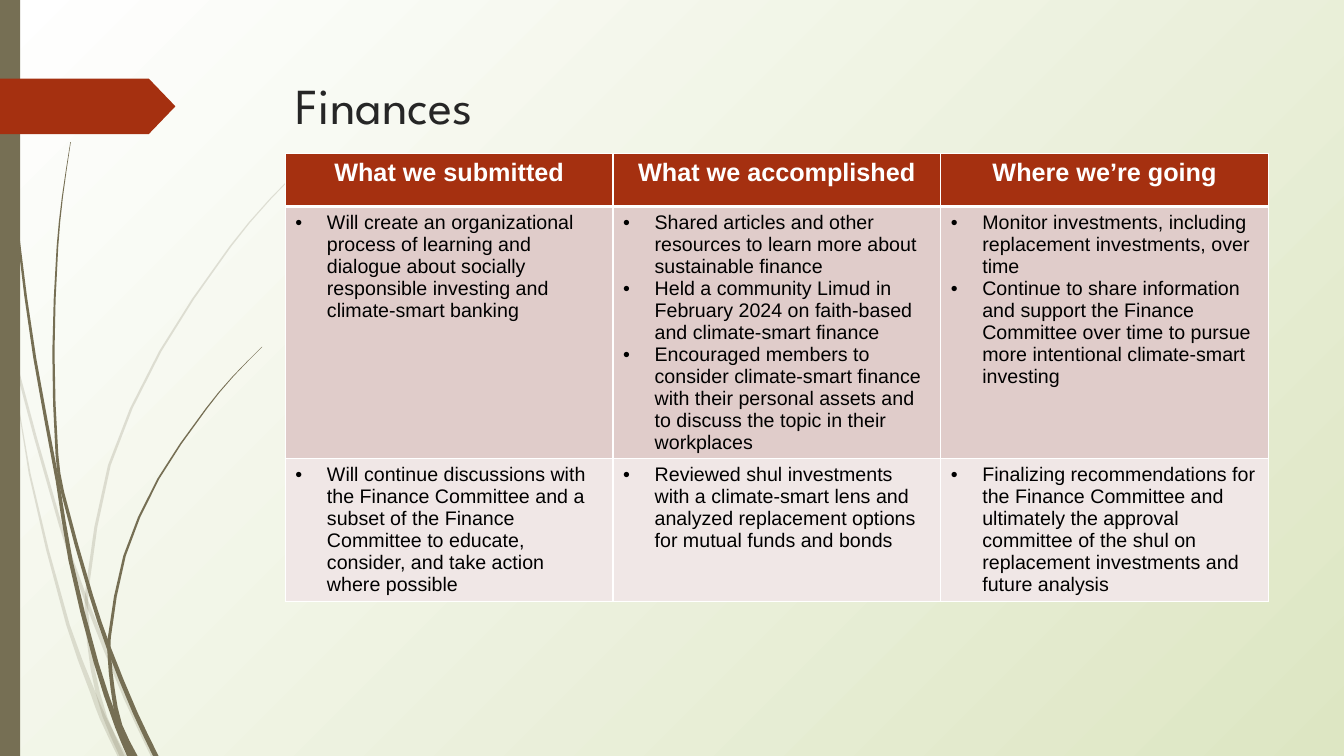
from dataclasses import dataclass

import pptx
import pptx.dml.color
import pptx.enum.shapes
import pptx.enum.text
import pptx.oxml
import pptx.oxml.ns
import pptx.util

COLORS = {
    "white": "FFFFFF", "pale green": "DDE6C3", "olive": "766F54", "rust": "A53010",
    "ink": "262626", "black": "000000", "rose": "E0CCCA", "blush": "F0E7E6",
}
WIDTH, HEIGHT = pptx.util.Inches(13.33), pptx.util.Inches(7.5)
GRID_COLS, GRID_ROWS = 133.3, 75
STEPS = 2  # samples between two knots of a grass blade


@dataclass
class Blade:
    """A grass blade: knots in grid cells from top to bottom, the knots where
    one section ends and the next begins, and its width at top and bottom."""
    knots: list[tuple[float, float]]
    joints: list[int]
    start: float
    end: float
    opacity: int = 100


@dataclass
class TableRow:
    height: float
    fill: str
    cells: list[list[str]]
    header: bool = False


BLADES = [
    Blade([(0.1, 29), (1.2, 34.7), (6, 52.1), (8.6, 59.7), (12.5, 69.3), (15.2, 75)],
          [1, 3], 0.2, 0.5, 20),
    Blade([(1.1, 35), (2.95, 47), (6.75, 62), (9.25, 68.8), (10.3, 71.4), (12.1, 75)],
          [4], 0, 0.9, 20),
    Blade([(31.2, 15.3), (26.8, 19.75), (22.85, 24.45), (15.9, 34.85), (10.85, 46.15),
           (8.65, 58.4), (8.6, 61), (9.2, 66.4), (10.4, 71.1), (12.1, 75)],
          [5, 6, 8], 0.1, 0.5, 20),
    Blade([(0.35, 0), (0.75, 11), (1.8, 23.3), (3.45, 35.5), (5.7, 47.7), (7, 55.6),
           (9.55, 65.8), (11.7, 72.2), (12.9, 75)], [4, 7], 0.1, 0.6),
    Blade([(7, 14.1), (6.2, 19.5), (5.7, 24.5), (5.3, 34.9), (5.65, 45.1), (6.2, 48.8),
           (9.05, 59.1), (10.8, 64.3), (13.4, 70.7), (15.45, 75)], [5, 7], 0.05, 0.55),
    Blade([(26, 34.4), (23.1, 37.35), (20.45, 40.55), (15.7, 47.5), (12.35, 55.15),
           (10.85, 63.2), (10.85, 65), (11.2, 68.5), (11.9, 71.9), (13.4, 75)],
          [5, 6, 8], 0.05, 0.5),
]
TABLE_ROWS = [
    TableRow(5.28, "rust", [["What we submitted"], ["What we accomplished"],
                            ["Where we’re going"]], header=True),
    TableRow(13.5, "rose", [
        ["Will create an organizational process of learning and dialogue about socially "
         "responsible investing and climate-smart banking"],
        ["Shared articles and other resources to learn more about sustainable finance",
         "Held a community Limud in February 2024 on faith-based and climate-smart finance",
         "Encouraged members to consider climate-smart finance with their personal assets "
         "and to discuss the topic in their workplaces"],
        ["Monitor investments, including replacement investments, over time",
         "Continue to share information and support the Finance Committee over time to "
         "pursue more intentional climate-smart investing"],
    ]),
    TableRow(13.5, "blush", [
        ["Will continue discussions with the Finance Committee and a subset of the Finance "
         "Committee to educate, consider, and take action where possible"],
        ["Reviewed shul investments with a climate-smart lens and analyzed replacement "
         "options for mutual funds and bonds"],
        ["Finalizing recommendations for the Finance Committee and ultimately the approval "
         "committee of the shul on replacement investments and future analysis"],
    ]),
]


def col(n: float) -> int:
    return round(WIDTH * n / GRID_COLS)


def row(n: float) -> int:
    return round(HEIGHT * n / GRID_ROWS)


def box(left: float, top: float, width: float, height: float) -> tuple[int, int, int, int]:
    return col(left), row(top), col(width), row(height)


def rgb(name: str) -> pptx.dml.color.RGBColor:
    return pptx.dml.color.RGBColor.from_string(COLORS[name])


def xml(tag: str, attrs: str = "", inner: str = ""):
    return pptx.oxml.parse_xml(
        f'<a:{tag} {pptx.oxml.ns.nsdecls("a")} {attrs}>{inner}</a:{tag}>')


def add_text(tf, lines: list[str], *, size: float, color: str, font: str = "Arial",
             bold: bool = False, align: str = "LEFT", bullet: bool = False) -> None:
    for i, line in enumerate(lines):
        p = tf.add_paragraph() if i else tf.paragraphs[0]
        p.alignment = getattr(pptx.enum.text.PP_ALIGN, align)
        r = p.add_run()
        r.text = line
        r.font.size, r.font.name, r.font.bold = pptx.util.Pt(size), font, bold
        r.font.color.rgb = rgb(color)
        if bullet:
            pPr = p._p.get_or_add_pPr()
            pPr.set("marL", str(col(3.13)))
            pPr.set("indent", str(-col(3.13)))
            pPr.append(xml("buFont", 'typeface="Arial"'))
            pPr.append(xml("buChar", 'char="•"'))


def paint(sp, color: str, opacity: int = 100) -> None:
    sp.shadow.inherit = False
    sp.line.fill.background()
    sp.fill.solid()
    sp.fill.fore_color.rgb = rgb(color)
    if opacity < 100:
        clr = next(sp._element.spPr.iter(pptx.oxml.ns.qn("a:srgbClr")))
        clr.append(xml("alpha", f'val="{opacity * 1000}"'))


def smooth(knots: list[tuple[float, float]]) -> list[tuple[float, float]]:
    """Sample a cubic Hermite curve, x as a function of y, through the knots."""
    ends = [knots[0], *knots, knots[-1]]
    slopes = [(c[0] - a[0]) / (c[1] - a[1]) for a, c in zip(ends, ends[2:])]
    points = []
    for (x0, y0), (x1, y1), m0, m1 in zip(knots, knots[1:], slopes, slopes[1:]):
        h = y1 - y0
        for step in range(STEPS):
            t = step / STEPS
            x = (x0 + (x1 - x0) * t * t * (3 - 2 * t)
                 + h * t * (1 - t) * (m0 * (1 - t) - m1 * t))
            points.append((x, y0 + h * t))
    return points + [knots[-1]]


def draw_blade(s, blade: Blade) -> None:
    points = smooth(blade.knots)
    last = len(points) - 1
    left, right = [], []
    for i, (x, y) in enumerate(points):
        half = (blade.start + (blade.end - blade.start) * i / last) / 2
        left.append((col(x - half), row(y)))
        right.append((col(x + half), row(y)))
    cuts = [0, *(joint * STEPS for joint in blade.joints), last]
    for a, b in zip(cuts, cuts[1:]):
        outline = left[a:b + 1] + right[a:b + 1][::-1]
        builder = s.shapes.build_freeform(*outline[0])
        builder.add_line_segments(outline[1:], close=True)
        paint(builder.convert_to_shape(), "olive", blade.opacity)


def set_borders(cell, top: float, bottom: float) -> None:
    tcPr = cell._tc.get_or_add_tcPr()
    fill = f'<a:solidFill><a:srgbClr val="{COLORS["white"]}"/></a:solidFill>'
    for i, (side, width) in enumerate(zip("LRTB", (1, 1, top, bottom))):
        tcPr.insert(i, xml(f"ln{side}", f'w="{pptx.util.Pt(width)}"', fill))


def draw_table(s, rows: list[TableRow]) -> None:
    height = sum(r.height for r in rows)
    table = s.shapes.add_table(len(rows), 3, *box(28.3, 15.2, 97.5, height)).table
    for i, entry in enumerate(rows):
        table.rows[i].height = row(entry.height)
        style = (dict(size=18, color="white", bold=True, align="CENTER") if entry.header
                 else dict(size=14, color="black", bullet=True))
        for cell, lines in zip(table.rows[i].cells, entry.cells):
            cell.fill.solid()
            cell.fill.fore_color.rgb = rgb(entry.fill)
            set_borders(cell, top=3 if i == 1 else 1, bottom=3 if entry.header else 1)
            add_text(cell.text_frame, lines, **style)


def draw_background(s) -> None:
    fill = s.background.fill
    fill.gradient()
    for stop, name in zip(fill.gradient_stops, ("white", "pale green")):
        stop.color.rgb = rgb(name)
    lin = next(s.element.iter(pptx.oxml.ns.qn("a:lin")))
    lin.getparent().replace(
        lin, xml("path", 'path="circle"', '<a:fillToRect r="100000" b="100000"/>'))


def draw_title(s, text: str) -> None:
    title = s.shapes.title
    title.left, title.top, title.width, title.height = box(28.35, 6.85, 97.5, 14)
    tf = title.text_frame
    tf.auto_size = pptx.enum.text.MSO_AUTO_SIZE.NONE
    tf.vertical_anchor = pptx.enum.text.MSO_ANCHOR.TOP
    add_text(tf, [text], size=36, color="ink", font="League Spartan")


def main() -> None:
    prs = pptx.Presentation()
    prs.slide_width, prs.slide_height = WIDTH, HEIGHT
    s = prs.slides.add_slide(prs.slide_layouts.get_by_name("Title Only"))
    draw_background(s)
    for blade in BLADES:
        draw_blade(s, blade)
    shape_type = pptx.enum.shapes.MSO_SHAPE
    paint(s.shapes.add_shape(shape_type.RECTANGLE, *box(0, 0, 2, GRID_ROWS)), "olive")
    arrow = s.shapes.add_shape(shape_type.PENTAGON, *box(0, 7.8, 17.4, 5.5))
    arrow.adjustments[0] = 0.48
    paint(arrow, "rust")
    draw_title(s, "Finances")
    draw_table(s, TABLE_ROWS)
    prs.save("out.pptx")


if __name__ == "__main__":
    main()
